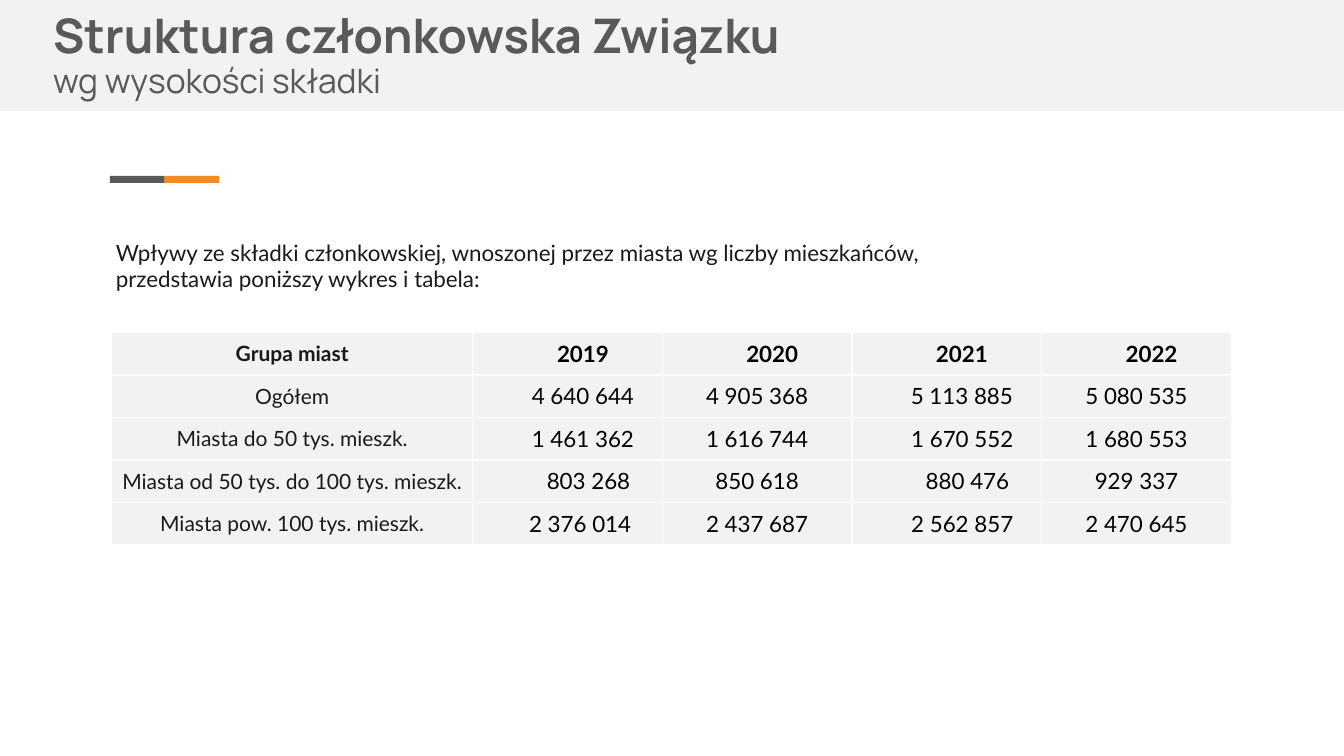
from dataclasses import dataclass

from lxml import etree
from pptx import Presentation
from pptx.dml.color import RGBColor
from pptx.enum import shapes, text
from pptx.oxml import ns
from pptx.util import Cm, Pt

TITLE = "Struktura członkowska Związku"
SUBTITLE = "wg wysokości składki"
INTRO = [
    "Wpływy ze składki członkowskiej, wnoszonej przez miasta wg liczby mieszkańców,",
    "przedstawia poniższy wykres i tabela:",
]
FEES = [
    ("Grupa miast", "2019", "2020", "2021", "2022"),
    ("Ogółem", "4 640 644", "4 905 368", "5 113 885", "5 080 535"),
    ("Miasta do 50 tys. mieszk.", "1 461 362", "1 616 744", "1 670 552", "1 680 553"),
    ("Miasta od 50 tys. do 100 tys. mieszk.", "803 268", "850 618", "880 476", "929 337"),
    ("Miasta pow. 100 tys. mieszk.", "2 376 014", "2 437 687", "2 562 857", "2 470 645"),
]
# Left indent of each cell, in cm
INDENTS = [
    (0, 0.78, 0.76, 0.76, 0.76),
    (0, 0.78, 0, 0.76, 0),
    (0, 0.78, 0, 0.78, 0),
    (0, 1.06, 0, 1.04, 0),
    (0, 0.64, 0, 0.78, 0),
]


@dataclass(frozen=True)
class Theme:
    panel: str = "F2F2F2"
    grey: str = "58595B"
    orange: str = "F68B1F"
    ink: str = "1A1A1A"
    black: str = "000000"
    white: str = "FFFFFF"
    heading_font: str = "Manrope"
    body_font: str = "Lato"
    title_size: int = 34
    subtitle_size: int = 24
    body_size: int = 16
    label_size: int = 15


THEME = Theme()


def write(para, words, size=THEME.body_size, color=THEME.ink, font=THEME.body_font,
          bold=False, align=text.PP_ALIGN.LEFT, indent=0, spacing=None):
    para.alignment = align
    if indent:
        para._p.get_or_add_pPr().set("marL", str(Cm(indent)))
    if spacing:
        para.line_spacing = spacing
    span = para.add_run()
    span.text = words
    span.font.name = font
    span.font.size = Pt(size)
    span.font.bold = bold
    span.font.color.rgb = RGBColor.from_string(color)


def add_bar(page, left, top, width, height, color):
    bar = page.shapes.add_shape(shapes.MSO_SHAPE.RECTANGLE,
                                Cm(left), Cm(top), Cm(width), Cm(height))
    bar.shadow.inherit = False
    bar.fill.solid()
    bar.fill.fore_color.rgb = RGBColor.from_string(color)
    bar.line.fill.background()


def add_text_box(page, left, top, width, height):
    frame = page.shapes.add_textbox(Cm(left), Cm(top), Cm(width), Cm(height)).text_frame
    frame.word_wrap = True
    return frame


def set_borders(cell, color, width):
    properties = cell._tc.get_or_add_tcPr()
    for side in ("lnL", "lnR", "lnT", "lnB"):
        line = etree.SubElement(properties, ns.qn(f"a:{side}"), w=str(Pt(width)))
        fill = etree.SubElement(line, ns.qn("a:solidFill"))
        etree.SubElement(fill, ns.qn("a:srgbClr"), val=color)


def add_fee_table(page, left, top, label_width, year_width, row_height):
    widths = [label_width] + [year_width] * (len(FEES[0]) - 1)
    table = page.shapes.add_table(len(FEES), len(widths), Cm(left), Cm(top),
                                  Cm(sum(widths)), Cm(row_height * len(FEES))).table
    for column, width in zip(table.columns, widths):
        column.width = Cm(width)
    for r, values in enumerate(FEES):
        table.rows[r].height = Cm(row_height)
        for c, value in enumerate(values):
            cell = table.cell(r, c)
            set_borders(cell, THEME.white, 1)
            cell.fill.solid()
            cell.fill.fore_color.rgb = RGBColor.from_string(THEME.panel)
            cell.vertical_anchor = text.MSO_ANCHOR.MIDDLE
            cell.margin_top = cell.margin_bottom = 0
            cell.margin_left = cell.margin_right = Cm(0.08 if c else 0.13)
            write(cell.text_frame.paragraphs[0], value,
                  size=THEME.body_size if c else THEME.label_size,
                  color=THEME.black if c else THEME.ink,
                  bold=r == 0, align=text.PP_ALIGN.CENTER, indent=INDENTS[r][c])


def main():
    deck = Presentation()
    deck.slide_width, deck.slide_height = Cm(33.87), Cm(19.05)
    page = deck.slides.add_slide(deck.slide_layouts[6])

    add_bar(page, 0, 0, 33.87, 2.8, THEME.panel)
    for i, color in enumerate((THEME.grey, THEME.orange)):
        add_bar(page, 2.77 + i * 1.38, 4.43, 1.38, 0.18, color)

    add_fee_table(page, 2.82, 8.38, 9.09, 4.78, 1.07)

    intro = add_text_box(page, 2.67, 5.89, 30.6, 1.63)
    for i, words in enumerate(INTRO):
        write(intro.add_paragraph() if i else intro.paragraphs[0], words)

    heading = add_text_box(page, 1.09, 0, 28.47, 2.51)
    heading.margin_left = heading.margin_right = Cm(0.25)
    heading.margin_top = Cm(0.32)
    write(heading.paragraphs[0], TITLE, size=THEME.title_size, color=THEME.grey,
          font=THEME.heading_font, bold=True, spacing=0.9)
    write(heading.add_paragraph(), SUBTITLE, size=THEME.subtitle_size, color=THEME.grey,
          font=THEME.heading_font, spacing=0.9)

    deck.save("out.pptx")


if __name__ == "__main__":
    main()
